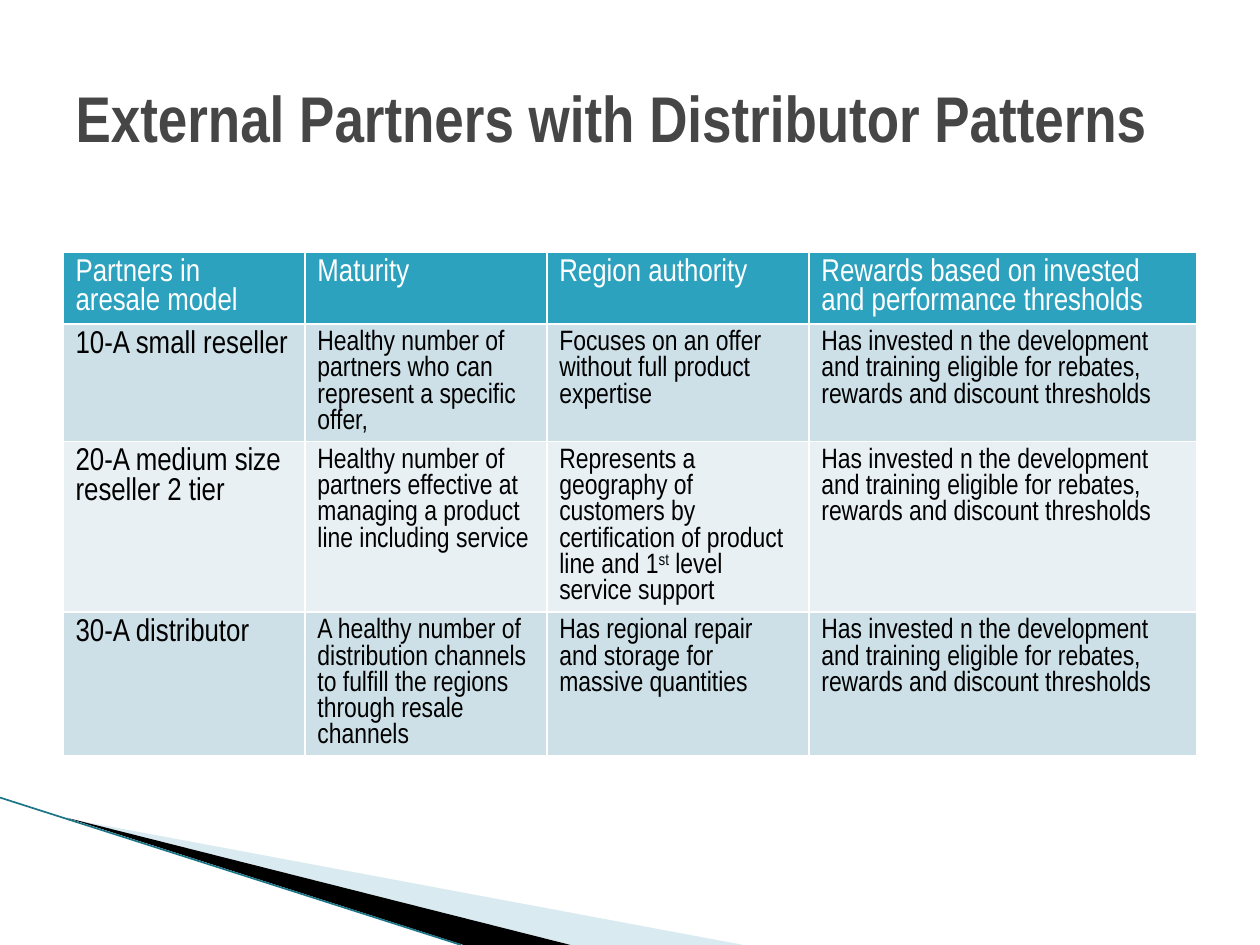
from lxml import etree
from pptx import Presentation
from pptx.dml.color import RGBColor
from pptx.enum.shapes import MSO_CONNECTOR
from pptx.enum.text import MSO_ANCHOR, PP_ALIGN
from pptx.oxml.ns import qn
from pptx.util import Inches, Pt

STRAIGHT = MSO_CONNECTOR.STRAIGHT
MIDDLE, LEFT = MSO_ANCHOR.MIDDLE, PP_ALIGN.LEFT
FONT = "Arial Narrow"
WHITE, BLACK, GREY, TEAL = "FFFFFF", "000000", "464646", "2DA2BF"
BANDS = ("CDE0E8", "E8F0F4")

TITLE = "External Partners with Distributor Patterns"
REWARDS = ("Has invested n the development and training eligible for rebates, "
           "rewards and discount thresholds")
ROWS = [
    ["Partners in aresale model", "Maturity", "Region authority",
     "Rewards based on invested and performance thresholds"],
    ["10-A small reseller",
     "Healthy number of partners who can represent a specific offer,",
     "Focuses on an offer without full product expertise", REWARDS],
    ["20-A medium size reseller 2 tier",
     "Healthy number of partners effective at managing a product line including service",
     ("Represents a geography of customers by certification of product line and 1",
      "st", " level service support"), REWARDS],
    ["30-A distributor",
     "A healthy number of distribution channels to fulfill the regions through resale channels",
     "Has regional repair and storage for massive quantities", REWARDS],
]
COL_WIDTHS = (1.92, 1.92, 2.08, 3.08)
ROW_HEIGHTS = (0.56, 0.93, 1.35, 1.14)
WEDGES = [
    ([(0.55, 6.5), (5.9, 7.5), (4.53, 7.5)], "A0CBDC", 40),
    ([(0.53, 6.49), (4.53, 7.5), (3.68, 7.5)], BLACK, 100),
]


def rgb(value):
    """Return a colour from its hex string."""
    return RGBColor.from_string(value)


def add_run(p, text, size, color, bold=False, baseline=0):
    """Add a formatted run to a paragraph."""
    r = p.add_run()
    r.text = text
    r.font.name, r.font.size, r.font.bold = FONT, Pt(size), bold
    r.font.color.rgb = rgb(color)
    if baseline:
        r.font._element.set("baseline", str(baseline * 1000))


def set_borders(cell):
    """Draw white lines on the four sides of a cell."""
    tc_pr = cell._tc.get_or_add_tcPr()
    for side in "LRTB":
        ln = etree.SubElement(tc_pr, qn(f"a:ln{side}"), w=str(Pt(1)))
        fill = etree.SubElement(ln, qn("a:solidFill"))
        etree.SubElement(fill, qn("a:srgbClr"), val=WHITE)


def add_wedge(s, points, color, opacity):
    """Add a filled polygon."""
    start, *rest = [(Inches(x), Inches(y)) for x, y in points]
    builder = s.shapes.build_freeform(*start)
    builder.add_line_segments(rest, close=True)
    sp = builder.convert_to_shape()
    sp.shadow.inherit = False
    sp.line.fill.background()
    sp.fill.solid()
    sp.fill.fore_color.rgb = rgb(color)
    if opacity < 100:
        clr = sp._element.spPr.find(qn("a:solidFill")).find(qn("a:srgbClr"))
        etree.SubElement(clr, qn("a:alpha"), val=str(opacity * 1000))


def add_partner_table(s):
    """Add the table of partners."""
    frame = s.shapes.add_table(len(ROWS), len(COL_WIDTHS), Inches(0.5), Inches(2),
                               Inches(sum(COL_WIDTHS)), Inches(sum(ROW_HEIGHTS)))
    table = frame.table
    for column, width in zip(table.columns, COL_WIDTHS):
        column.width = Inches(width)
    for i, (row, height) in enumerate(zip(ROWS, ROW_HEIGHTS)):
        table.rows[i].height = Inches(height)
        for j, content in enumerate(row):
            cell = table.cell(i, j)
            set_borders(cell)
            cell.fill.solid()
            cell.fill.fore_color.rgb = rgb(BANDS[(i - 1) % 2] if i else TEAL)
            parts = (content,) if isinstance(content, str) else content
            for k, text in enumerate(parts):
                add_run(cell.text_frame.paragraphs[0], text,
                        size=16 if i and j else 18, color=BLACK if i else WHITE,
                        baseline=30 * (k % 2))


def main():
    """Build and save the slide."""
    prs = Presentation()
    prs.slide_width, prs.slide_height = Inches(10), Inches(7.5)
    s = prs.slides.add_slide(prs.slide_layouts[5])
    for points, color, opacity in WEDGES:
        add_wedge(s, points, color, opacity)
    line = s.shapes.add_connector(STRAIGHT, Inches(0), Inches(6.33), Inches(3.66), Inches(7.5))
    line.line.color.rgb = rgb("1B7587")
    line.line.width = Pt(0.95)
    etree.SubElement(line._element.spPr, qn("a:effectLst"))
    add_partner_table(s)

    title = s.shapes.title
    title.left, title.top = Inches(0.5), Inches(0.3)
    title.width, title.height = Inches(9), Inches(1.25)
    tf = title.text_frame
    tf.word_wrap, tf.vertical_anchor = True, MIDDLE
    p = tf.paragraphs[0]
    p.alignment = LEFT
    add_run(p, TITLE, size=36.9, color=GREY, bold=True)
    prs.save("out.pptx")


if __name__ == "__main__":
    main()
